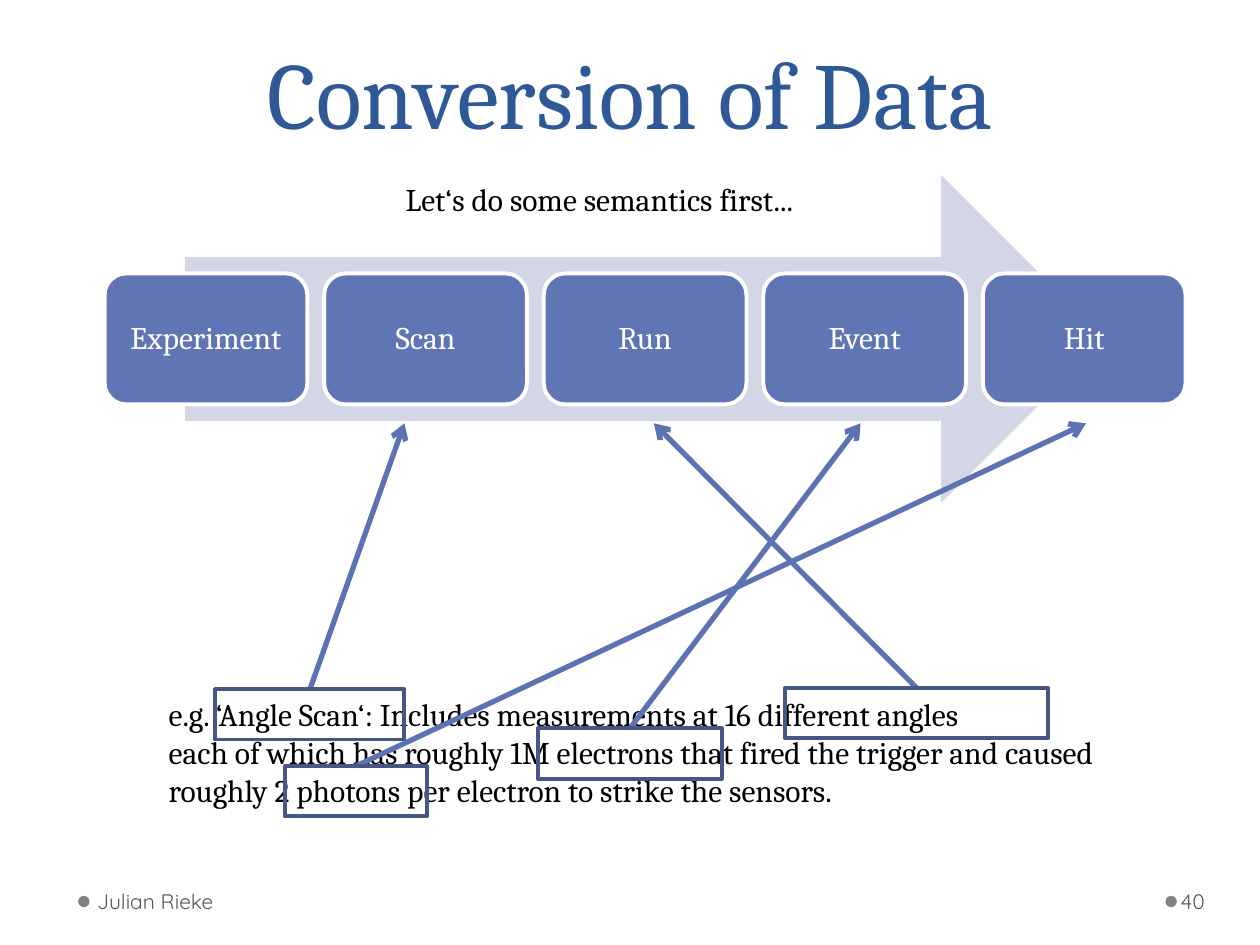
from dataclasses import dataclass

from lxml.etree import SubElement
from pptx import Presentation
from pptx.dml.color import RGBColor
from pptx.enum.shapes import MSO_CONNECTOR as Connector, MSO_SHAPE as Shape
from pptx.enum.text import MSO_ANCHOR as Anchor, MSO_AUTO_SIZE as AutoSize, PP_ALIGN as Align
from pptx.oxml.ns import qn
from pptx.util import Inches, Pt


@dataclass(frozen=True)
class Theme:
    serif: str = "Cambria"
    sans: str = "Quicksand"
    title: str = "2F5897"
    body: str = "000000"
    footer: str = "595959"
    dot: str = "808080"
    band: str = "D2D6E5"
    step: str = "6076B4"
    white: str = "FFFFFF"
    link: str = "5C72B2"
    frame: str = "475785"
    title_size: float = 54
    body_size: float = 18
    footer_size: float = 12
    outline: float = 2.25
    link_width: float = 3


@dataclass(frozen=True)
class Box:
    left: float
    top: float
    width: float
    height: float

    def lengths(self) -> tuple:
        return tuple(Inches(n) for n in (self.left, self.top, self.width, self.height))


@dataclass(frozen=True)
class Callout:
    box: Box
    target_x: float


@dataclass(frozen=True)
class FooterItem:
    text: str
    box: Box
    dot_left: float
    left_inset: float
    right_inset: float


THEME = Theme()
STEPS = ["Experiment", "Scan", "Run", "Event", "Hit"]
FIRST_STEP = Box(0.83, 2.17, 1.61, 1.04)
LAST_STEP_LEFT = 7.8
LINK_END_Y = 3.36
EXAMPLE = [
    "e.g. ‘Angle Scan‘: Includes measurements at 16 different angles",
    "each of which has roughly 1M electrons that fired the trigger and caused",
    "roughly 2 photons per electron to strike the sensors.",
]
CALLOUTS = [
    Callout(Box(1.71, 5.47, 1.5, 0.4), 3.21),
    Callout(Box(6.23, 5.46, 2.09, 0.4), 5.19),
    Callout(Box(4.27, 5.78, 1.46, 0.4), 6.83),
    Callout(Box(2.26, 6.08, 1.13, 0.4), 8.62),
]
FOOTER = [
    FooterItem("Julian Rieke", Box(0.72, 6.95, 3.11, 0.4), 0.62, 0.05, 0.1),
    FooterItem("40", Box(9.34, 6.95, 0.61, 0.4), 9.25, 0.03, 0.05),
]


def color(code: str) -> RGBColor:
    return RGBColor.from_string(code)


def add_span(para, text: str, size: float, code: str, font: str = THEME.serif) -> None:
    span = para.add_run()
    span.text = text
    span.font.size = Pt(size)
    span.font.name = font
    span.font.color.rgb = color(code)


def set_insets(frame, left: float, top: float, right: float, bottom: float) -> None:
    frame.margin_left, frame.margin_top = Inches(left), Inches(top)
    frame.margin_right, frame.margin_bottom = Inches(right), Inches(bottom)


def add_figure(page, kind, box: Box, fill: str | None = None, line: str | None = None):
    figure = page.shapes.add_shape(kind, *box.lengths())
    figure.shadow.inherit = False
    if fill:
        figure.fill.solid()
        figure.fill.fore_color.rgb = color(fill)
    else:
        figure.fill.background()
    if line:
        figure.line.color.rgb = color(line)
        figure.line.width = Pt(THEME.outline)
    else:
        figure.line.fill.background()
    return figure


def add_title(page, text: str) -> None:
    title = page.shapes.title
    title.left, title.top, title.width, title.height = Box(0.5, 0, 9, 1.23).lengths()
    frame = title.text_frame
    frame.vertical_anchor = Anchor.BOTTOM
    frame.auto_size = AutoSize.NONE
    para = frame.paragraphs[0]
    para.alignment = Align.CENTER
    para.line_spacing = Pt(58)
    add_span(para, text, THEME.title_size, THEME.title)


def add_footer_item(page, item: FooterItem) -> None:
    add_figure(page, Shape.OVAL, Box(item.dot_left, 7.11, 0.09, 0.09), THEME.dot)
    frame = page.shapes.add_textbox(*item.box.lengths()).text_frame
    frame.word_wrap = True
    frame.vertical_anchor = Anchor.MIDDLE
    set_insets(frame, item.left_inset, 0.05, item.right_inset, 0.05)
    add_span(frame.paragraphs[0], item.text, THEME.footer_size, THEME.footer, THEME.sans)


def add_step(page, index: int, text: str) -> None:
    pitch = (LAST_STEP_LEFT - FIRST_STEP.left) / (len(STEPS) - 1)
    left = FIRST_STEP.left + index * pitch
    box = Box(left, FIRST_STEP.top, FIRST_STEP.width, FIRST_STEP.height)
    step = add_figure(page, Shape.ROUNDED_RECTANGLE, box, THEME.step, THEME.white)
    frame = step.text_frame
    frame.word_wrap = True
    frame.vertical_anchor = Anchor.MIDDLE
    set_insets(frame, 0.07, 0.07, 0.07, 0.07)
    para = frame.paragraphs[0]
    para.alignment = Align.CENTER
    para.line_spacing = 0.9
    add_span(para, text, THEME.body_size, THEME.white)


def add_lines(page, box: Box, lines: list[str]) -> None:
    frame = page.shapes.add_textbox(*box.lengths()).text_frame
    frame.word_wrap = False
    frame.auto_size = AutoSize.SHAPE_TO_FIT_TEXT
    for index, text in enumerate(lines):
        para = frame.add_paragraph() if index else frame.paragraphs[0]
        add_span(para, text, THEME.body_size, THEME.body)


def add_callout(page, callout: Callout) -> None:
    box = callout.box
    link = page.shapes.add_connector(
        Connector.STRAIGHT,
        Inches(box.left + box.width / 2), Inches(box.top),
        Inches(callout.target_x), Inches(LINK_END_Y),
    )
    link.line.color.rgb = color(THEME.link)
    link.line.width = Pt(THEME.link_width)
    SubElement(link.line._get_or_add_ln(), qn("a:tailEnd"), type="arrow")
    SubElement(link._element.spPr, qn("a:effectLst"))
    add_figure(page, Shape.RECTANGLE, box, line=THEME.frame)


def main() -> None:
    deck = Presentation()
    deck.slide_width, deck.slide_height = Inches(10), Inches(7.5)
    page = deck.slides.add_slide(deck.slide_layouts[5])
    add_title(page, "Conversion of Data")
    for item in FOOTER:
        add_footer_item(page, item)
    add_figure(page, Shape.RIGHT_ARROW, Box(1.47, 1.39, 7.3, 2.6), THEME.band)
    for index, text in enumerate(STEPS):
        add_step(page, index, text)
    add_lines(page, Box(1.24, 5.47, 8.3, 1.01), EXAMPLE)
    for callout in CALLOUTS:
        add_callout(page, callout)
    add_lines(page, Box(3.12, 1.38, 3.61, 0.4), ["Let‘s do some semantics first..."])
    deck.save("out.pptx")


if __name__ == "__main__":
    main()
